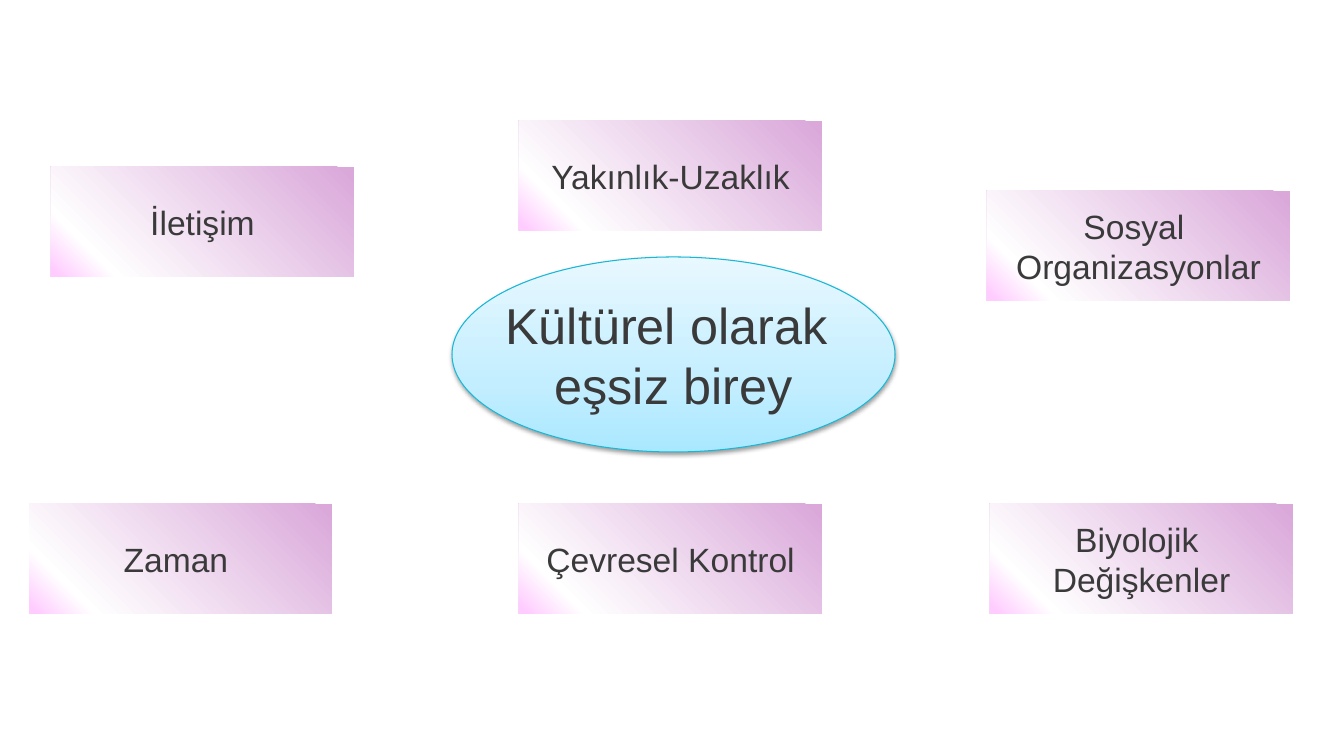
from lxml.etree import SubElement
from pptx import Presentation
from pptx.dml.color import RGBColor
from pptx.enum.shapes import MSO_SHAPE
from pptx.enum.text import MSO_ANCHOR, PP_ALIGN
from pptx.oxml.ns import qn
from pptx.util import Pt

PX = 914400 / 100.8
LILAC = [(2, "DAA9DA"), (84, "FFFFFF"), (98, "FFCCFF")]
SKY = [(0, "AAE8FF"), (35, "C3EEFF"), (100, "E8F8FF")]


def color(hex_code):
    return RGBColor.from_string(hex_code)


def add_label(kind, text, box, stops, angle, size):
    """Add a gradient shape with centred text; angle runs counter-clockwise."""
    label = slide.shapes.add_shape(kind, *(round(v * PX) for v in box))
    label.shadow.inherit = False
    label.line.fill.background()
    label.fill.gradient()
    label.fill.gradient_angle = angle
    stop_list = label._element.spPr.find(".//" + qn("a:gsLst"))
    stop_list.clear()
    for percent, hex_code in stops:
        stop = SubElement(stop_list, qn("a:gs"), pos=str(percent * 1000))
        SubElement(stop, qn("a:srgbClr"), val=hex_code)
    frame = label.text_frame
    frame.word_wrap = False
    frame.vertical_anchor = MSO_ANCHOR.MIDDLE
    frame.text = text
    for paragraph in frame.paragraphs:
        paragraph.alignment = PP_ALIGN.CENTER
        font = paragraph.runs[0].font
        font.name = "Arial"
        font.size = Pt(size)
        font.color.rgb = color("3A3A3A")
    return label


prs = Presentation()
prs.slide_width = round(1344 * PX)
prs.slide_height = round(756 * PX)
slide = prs.slides.add_slide(prs.slide_layouts[6])

# Central idea
individual = add_label(MSO_SHAPE.OVAL, "Kültürel olarak \neşsiz birey",
                       (452, 257, 443, 195), SKY, 90, 36)
individual.line.color.rgb = color("16B7D7")
individual.line.width = Pt(0.75)
effects = individual._element.spPr.find(qn("a:effectLst"))
shadow = SubElement(effects, qn("a:outerShdw"), blurRad=str(Pt(3.1)), dist=str(Pt(1.6)),
                    dir="5400000", rotWithShape="0")
shadow_color = SubElement(shadow, qn("a:srgbClr"), val="000000")
SubElement(shadow_color, qn("a:alpha"), val="38000")

# Cultural factors around it
factors = [
    ("İletişim", 51, 167),
    ("Çevresel Kontrol", 519, 504),
    ("Zaman ", 29, 504),
    ("Yakınlık-Uzaklık", 519, 121),
    ("Sosyal \nOrganizasyonlar", 987, 191),
    ("Biyolojik \nDeğişkenler", 990, 504),
]
for factor, left, top in factors:
    add_label(MSO_SHAPE.RECTANGLE, factor, (left, top, 303, 110), LILAC, 225, 24)

prs.save("out.pptx")
